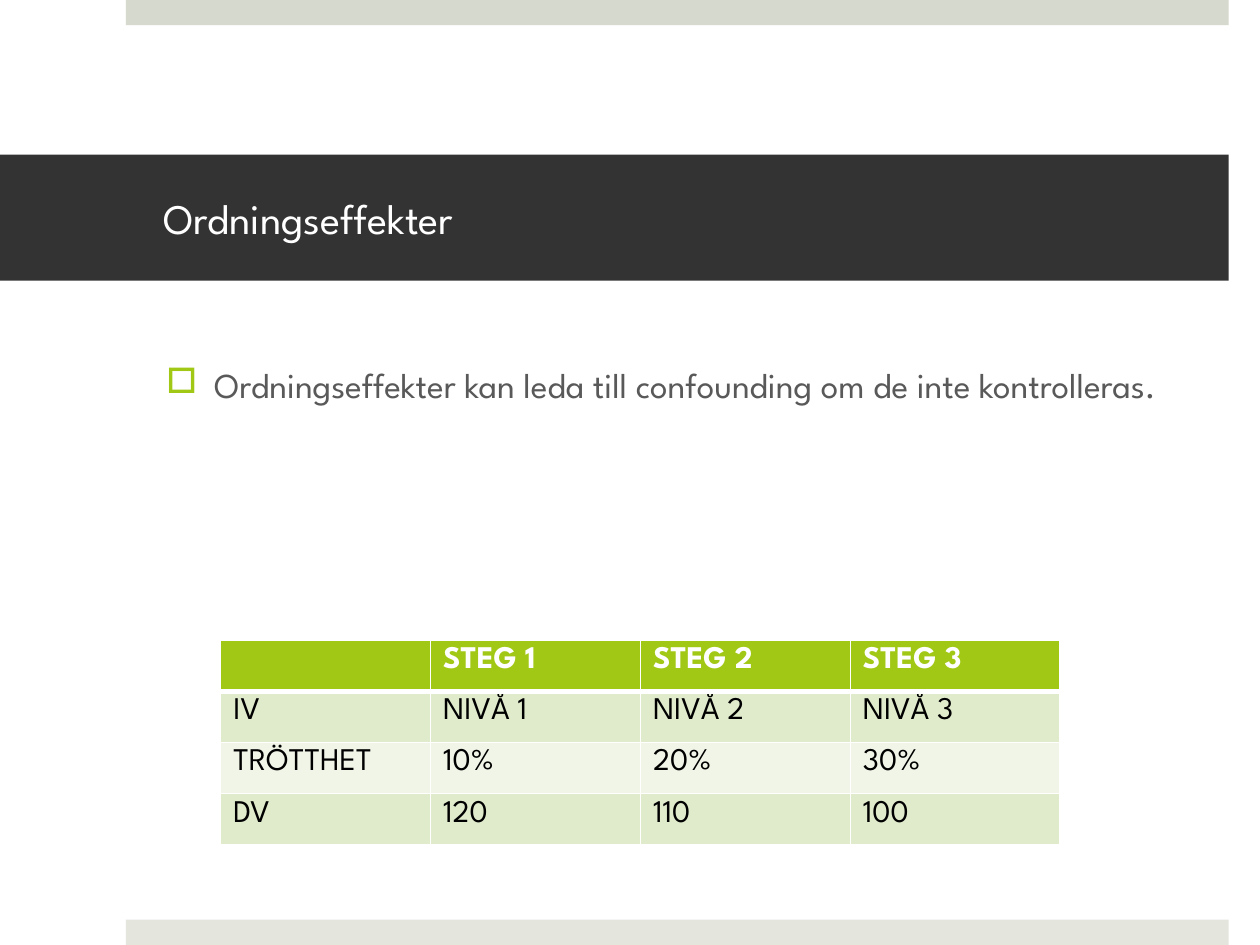
from lxml.etree import SubElement
from pptx import Presentation
from pptx.dml.color import RGBColor
from pptx.enum.shapes import MSO_SHAPE
from pptx.enum.text import MSO_ANCHOR, PP_ALIGN
from pptx.oxml import parse_xml
from pptx.oxml.ns import nsdecls, qn
from pptx.util import Cm, Pt

FONT = "League Spartan"
HEX = {
    "white": "FFFFFF", "black": "000000", "dark": "333333", "gray": "595959",
    "top": "D6D9CD", "foot": "E4E6DE",
    "lime": "A2C816", "band": "E0EBCC", "pale": "F0F5E7",
}
ROWS = [
    ["", "STEG 1", "STEG 2", "STEG 3"],
    ["IV", "NIVÅ 1", "NIVÅ 2", "NIVÅ 3"],
    ["TRÖTTHET", "10%", "20%", "30%"],
    ["DV", "120", "110", "100"],
]


def color(name):
    """Return the named colour."""
    return RGBColor.from_string(HEX[name])


def write(frame, text, size=18, ink="black", bold=False, before=0):
    """Put formatted text in a frame and return its paragraph."""
    para = frame.paragraphs[0]
    para.alignment = PP_ALIGN.LEFT
    para.space_before = Pt(before)
    run = para.add_run()
    run.text = text
    font = run.font
    font.name, font.size, font.bold = FONT, Pt(size), bold
    font.color.rgb = color(ink)
    return para


def add_bar(slide, left, top, width, height, fill):
    """Add a plain filled rectangle."""
    bar = slide.shapes.add_shape(
        MSO_SHAPE.RECTANGLE, Cm(left), Cm(top), Cm(width), Cm(height))
    bar.shadow.inherit = False
    bar.fill.solid()
    bar.fill.fore_color.rgb = color(fill)
    bar.line.fill.background()
    return bar


def add_title(slide, text):
    """Add the dark title band."""
    frame = add_bar(slide, 0, 3.12, 24.77, 2.54, "dark").text_frame
    frame.word_wrap = True
    frame.vertical_anchor = MSO_ANCHOR.MIDDLE
    frame.margin_left, frame.margin_right = Cm(3.3), Cm(0.76)
    write(frame, text, size=24, ink="white")


def add_bullet(slide, text):
    """Add the body text with a square bullet."""
    box = slide.shapes.add_textbox(Cm(3.1), Cm(7.21), Cm(21.13), Cm(10.19))
    frame = box.text_frame
    frame.word_wrap = True
    props = write(frame, text, size=20, ink="gray", before=20)._p.get_or_add_pPr()
    props.set("marL", str(Cm(0.97)))
    props.set("indent", str(-Cm(0.97)))
    tint = SubElement(props, qn("a:buClr"))
    SubElement(tint, qn("a:srgbClr"), val=HEX["lime"])
    SubElement(props, qn("a:buChar"), char="□")


def edge(cell, sides):
    """Draw white borders given as side and width in points."""
    props = cell._tc.get_or_add_tcPr()
    for spot, (side, width) in enumerate(sides.items()):
        props.insert(spot, parse_xml(
            f'<a:ln{side} {nsdecls("a")} w="{Pt(width)}"><a:solidFill>'
            f'<a:srgbClr val="{HEX["white"]}"/></a:solidFill></a:ln{side}>'))


def add_grid(slide, rows):
    """Add the banded table with a header row."""
    wide, high = Cm(4.23), Cm(1.03)
    count = len(rows[0])
    table = slide.shapes.add_table(
        len(rows), count, Cm(4.45), Cm(12.91),
        wide * count, high * len(rows)).table
    for col in table.columns:
        col.width = wide
    for i, row in enumerate(rows):
        table.rows[i].height = high
        head = i == 0
        fill = "lime" if head else ("band" if i % 2 else "pale")
        for j, text in enumerate(row):
            cell = table.cell(i, j)
            cell.fill.solid()
            cell.fill.fore_color.rgb = color(fill)
            edge(cell, {"L": 1, "R": 1, "T": 3 if i == 1 else 1,
                        "B": 3 if head else 1})
            write(cell.text_frame, text, ink="white" if head else "black",
                  bold=head)


def main():
    """Build the slide and save it."""
    deck = Presentation()
    deck.slide_width, deck.slide_height = Cm(25.4), Cm(19.05)
    slide = deck.slides.add_slide(deck.slide_layouts[6])
    add_bar(slide, 2.54, 0, 22.23, 0.51, "top")
    add_bar(slide, 2.54, 18.54, 22.23, 0.51, "foot")
    add_title(slide, "Ordningseffekter")
    add_bullet(slide, "Ordningseffekter kan leda till confounding "
                      "om de inte kontrolleras.")
    add_grid(slide, ROWS)
    deck.save("out.pptx")


if __name__ == "__main__":
    main()
